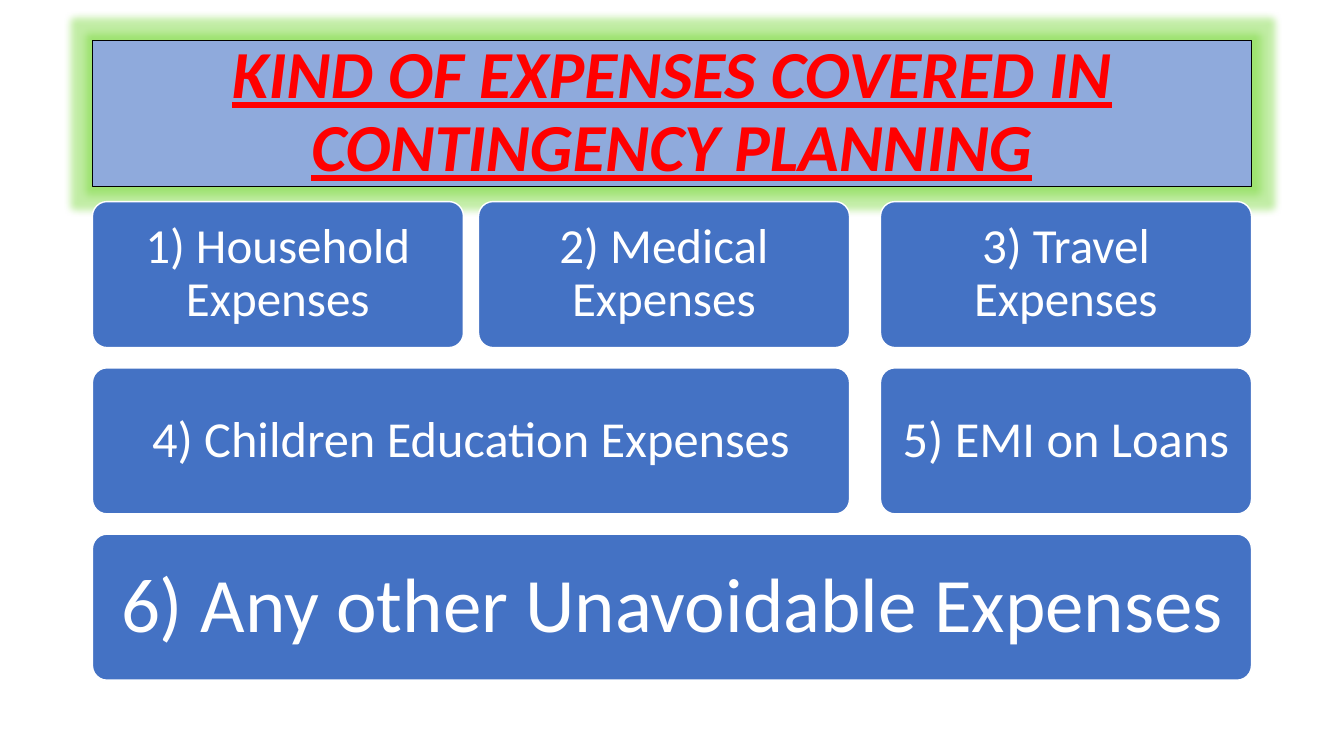
from lxml import etree
from pptx import Presentation
from pptx.dml.color import RGBColor
from pptx.enum.shapes import MSO_SHAPE
from pptx.enum.text import MSO_ANCHOR, PP_ALIGN
from pptx.oxml.ns import qn
from pptx.util import Cm, Pt


def color(hex_string):
    """Turn a hex string into a colour."""
    return RGBColor.from_string(hex_string)


def add_block(slide, shape_type, box, fill, line, line_width):
    """Add a filled, outlined shape in a box given in centimetres."""
    sp = slide.shapes.add_shape(shape_type, *(Cm(v) for v in box))
    sp.shadow.inherit = False
    sp.fill.solid()
    sp.fill.fore_color.rgb = color(fill)
    sp.line.color.rgb = color(line)
    sp.line.width = Pt(line_width)
    return sp


def set_text(sp, text, size, fill="FFFFFF", inset=None, after=0, emphasis=False):
    """Write one centred paragraph in a shape."""
    tf = sp.text_frame
    tf.word_wrap = True
    tf.vertical_anchor = MSO_ANCHOR.MIDDLE
    if inset is not None:
        tf.margin_left = tf.margin_right = Cm(inset)
        tf.margin_top = tf.margin_bottom = Cm(inset)
    p = tf.paragraphs[0]
    p.alignment = PP_ALIGN.CENTER
    p.line_spacing = 0.9
    p.space_after = Pt(after)
    r = p.add_run()
    r.text = text
    r.font.name = "Calibri"
    r.font.size = Pt(size)
    r.font.color.rgb = color(fill)
    r.font.bold = r.font.italic = r.font.underline = emphasis


def add_glow(sp, fill, radius, opacity):
    """Surround a shape with a soft coloured glow."""
    effects = sp._element.spPr.find(qn("a:effectLst"))
    glow = etree.SubElement(effects, qn("a:glow"), rad=str(Pt(radius)))
    clr = etree.SubElement(glow, qn("a:srgbClr"), val=fill)
    etree.SubElement(clr, qn("a:alpha"), val=str(opacity * 1000))


def add_title(slide, box, text):
    """Place the glowing title banner."""
    sp = add_block(slide, MSO_SHAPE.RECTANGLE, box, "8FAADC", "000000", 0.75)
    add_glow(sp, "68D321", 11, 40)
    set_text(sp, text, 48, fill="FF0000", emphasis=True)


def add_expenses(slide, box, rows):
    """Place rows of expense tiles, each a (text, first column, last column, size, inset)."""
    left, top, width, height = box
    tile_w, tile_h, near_gap = 9.35, 3.68, 0.38
    starts = [0, tile_w + near_gap, width - tile_w]
    pitch = (height - tile_h) / (len(rows) - 1)
    for i, row in enumerate(rows):
        for text, first, last, size, inset in row:
            tile = (left + starts[first], top + i * pitch,
                    starts[last] + tile_w - starts[first], tile_h)
            sp = add_block(slide, MSO_SHAPE.ROUNDED_RECTANGLE, tile, "4472C4", "FFFFFF", 1)
            sp.adjustments[0] = 0.1
            set_text(sp, text, size, inset=inset)


def main():
    """Build the slide and save it."""
    prs = Presentation()
    prs.slide_width, prs.slide_height = Cm(33.87), Cm(19.05)
    slide = prs.slides.add_slide(prs.slide_layouts[6])
    left, width = 2.33, 29.21
    add_title(slide, (left, 1.01, width, 3.68),
              "KIND OF EXPENSES COVERED IN CONTINGENCY PLANNING")
    add_expenses(slide, (left, 5.08, width, 12.06), [
        [("1) Household Expenses", 0, 0, 35, 0.38),
         ("2) Medical Expenses", 1, 1, 35, 0.38),
         ("3) Travel Expenses", 2, 2, 35, 0.38)],
        [("4) Children Education Expenses", 0, 1, 36, 0.38),
         ("5) EMI on Loans", 2, 2, 36, 0.38)],
        [("6) Any other Unavoidable Expenses", 0, 2, 55, 0.58)],
    ])
    prs.save("out.pptx")


if __name__ == "__main__":
    main()
